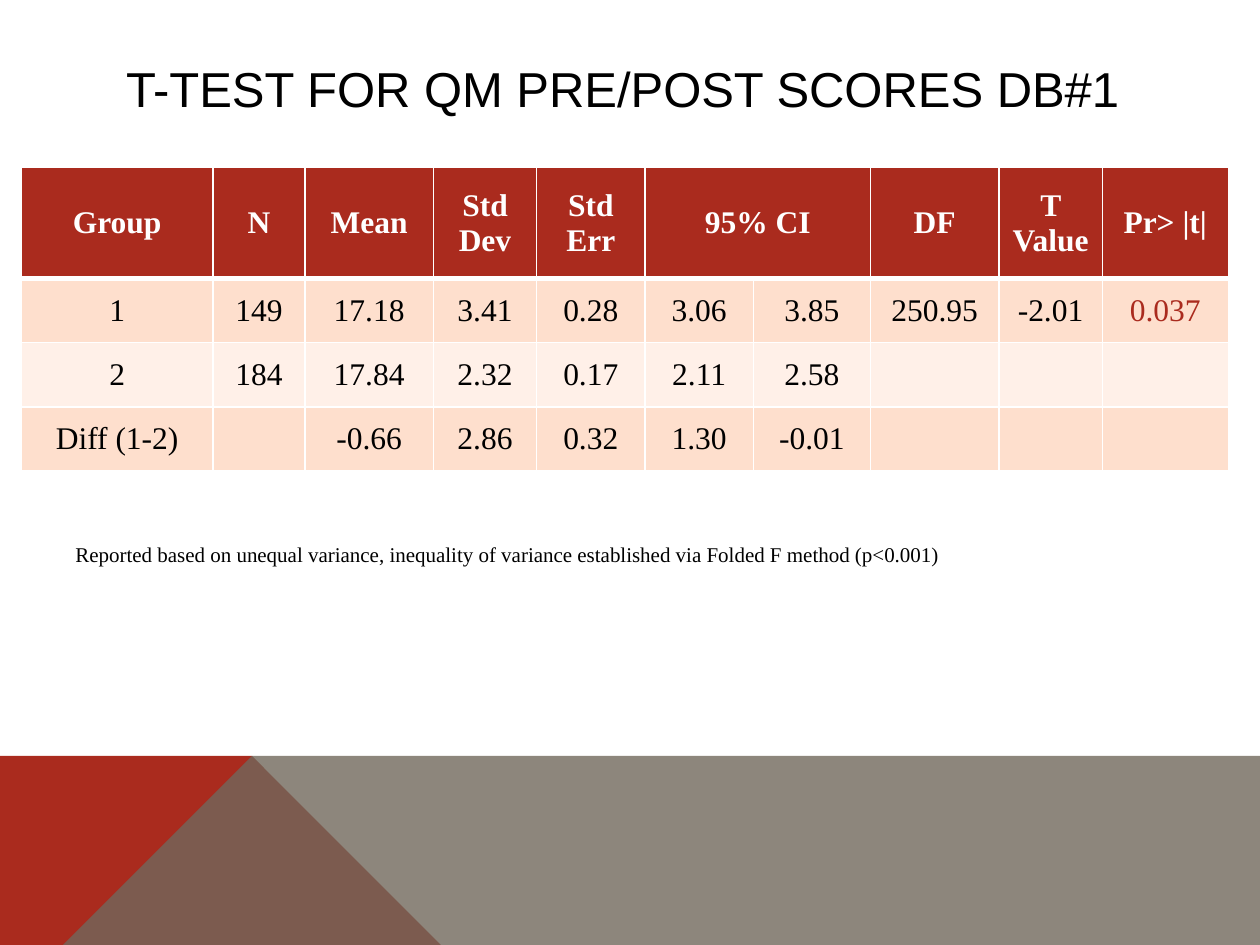
"""Build a slide with a t-test table above a two-tone ribbon."""
import pptx
import pptx.util
import pptx.dml.color
import pptx.enum.text
import pptx.oxml
import pptx.oxml.ns

WIDTH, HEIGHT = 10, 7.5
SERIF = "Times New Roman"
RED, BLACK, WHITE = "AA2B1E", "000000", "FFFFFF"
BAND_FILLS = ["FEDFCD", "FFF0E8"]

TITLE = "T-TEST FOR QM PRE/POST SCORES DB#1"
NOTE = ("Reported based on unequal variance, inequality of variance "
        "established via Folded F method (p<0.001)")
ROWS = [
    ["Group", "N", "Mean", "Std Dev", "Std Err", "95% CI", "", "DF", "T Value", "Pr> |t|"],
    ["1", "149", "17.18", "3.41", "0.28", "3.06", "3.85", "250.95", "-2.01", "0.037"],
    ["2", "184", "17.84", "2.32", "0.17", "2.11", "2.58", "", "", ""],
    ["Diff (1-2)", "", "-0.66", "2.86", "0.32", "1.30", "-0.01", "", "", ""],
]
COLUMN_WIDTHS = [1.52, 0.73, 1.02, 0.82, 0.86, 0.86, 0.93, 1.02, 0.82, 1]
ROW_HEIGHTS = [0.88, 0.51, 0.51, 0.51]
CI_COLUMN = 5
SIGNIFICANT = "0.037"

RIBBON_TOP, PEAK, RED_END = 5.52, 2.23, 3.91
RIBBONS = [
    ([(0, HEIGHT), (0, RIBBON_TOP), (PEAK, RIBBON_TOP), (RED_END, HEIGHT)], RED, 100),
    ([(0, HEIGHT), (PEAK, RIBBON_TOP), (WIDTH, RIBBON_TOP), (WIDTH, HEIGHT)], "71685C", 80),
]

inches = pptx.util.Inches
ALIGN = pptx.enum.text.PP_ALIGN
MIDDLE = pptx.enum.text.MSO_ANCHOR.MIDDLE


def paint(fill, color):
    fill.solid()
    fill.fore_color.rgb = pptx.dml.color.RGBColor.from_string(color)


def write(frame, text, size, font, color, align=ALIGN.LEFT, bold=False):
    para = frame.paragraphs[0]
    para.alignment = align
    span = para.add_run()
    span.text = text
    span.font.size = pptx.util.Pt(size)
    span.font.name = font
    span.font.bold = bold
    paint(span.font.fill, color)


def place(box, left, top, width, height):
    box.left, box.top = inches(left), inches(top)
    box.width, box.height = inches(width), inches(height)


def add_ribbon(page, points, color, opacity):
    builder = page.shapes.build_freeform(*points[0], scale=inches(1))
    builder.add_line_segments(points[1:], close=True)
    ribbon = builder.convert_to_shape()
    ribbon.shadow.inherit = False
    ribbon.line.fill.background()
    paint(ribbon.fill, color)
    if opacity < 100:
        tone = ribbon.fill._xPr.find(".//" + pptx.oxml.ns.qn("a:srgbClr"))
        tone.append(pptx.oxml.parse_xml(
            f'<a:alpha {pptx.oxml.ns.nsdecls("a")} val="{opacity * 1000}"/>'))


def add_borders(cell, widths):
    properties = cell._tc.get_or_add_tcPr()
    for side, width in zip("LRTB", widths):
        properties.append(pptx.oxml.parse_xml(
            f'<a:ln{side} {pptx.oxml.ns.nsdecls("a")} w="{pptx.util.Pt(width)}">'
            f'<a:solidFill><a:srgbClr val="{WHITE}"/></a:solidFill></a:ln{side}>'))


def add_results(page):
    table = page.shapes.add_table(
        len(ROWS), len(COLUMN_WIDTHS), inches(0.17), inches(1.33),
        inches(sum(COLUMN_WIDTHS)), inches(sum(ROW_HEIGHTS))).table
    for column, width in zip(table.columns, COLUMN_WIDTHS):
        column.width = inches(width)
    for row, height in zip(table.rows, ROW_HEIGHTS):
        row.height = inches(height)
    table.cell(0, CI_COLUMN).merge(table.cell(0, CI_COLUMN + 1))
    for r, values in enumerate(ROWS):
        header = r == 0
        for c, value in enumerate(values):
            cell = table.cell(r, c)
            cell.vertical_anchor = MIDDLE
            add_borders(cell, [1, 1, 3 if r == 1 else 1, 3 if header else 1])
            paint(cell.fill, RED if header else BAND_FILLS[(r - 1) % 2])
            if value:
                color = WHITE if header else RED if value == SIGNIFICANT else BLACK
                write(cell.text_frame, value, 18, SERIF, color, ALIGN.CENTER, header)


def main():
    deck = pptx.Presentation()
    deck.slide_width, deck.slide_height = inches(WIDTH), inches(HEIGHT)
    page = deck.slides.add_slide(deck.slide_layouts[5])
    for points, color, opacity in RIBBONS:
        add_ribbon(page, points, color, opacity)

    title = page.shapes.title
    place(title, 0.9, 0.4, 8.22, 0.6)
    title.text_frame.auto_size = pptx.enum.text.MSO_AUTO_SIZE.NONE
    title.text_frame.vertical_anchor = MIDDLE
    write(title.text_frame, TITLE, 28, "Arial", BLACK)

    add_results(page)

    note = page.shapes.add_textbox(0, 0, 0, 0)
    place(note, 0.5, 4.25, 8.5, 0.3)
    note.text_frame.word_wrap = True
    note.text_frame.auto_size = pptx.enum.text.MSO_AUTO_SIZE.SHAPE_TO_FIT_TEXT
    write(note.text_frame, NOTE, 12, SERIF, BLACK)
    deck.save("out.pptx")


if __name__ == "__main__":
    main()
